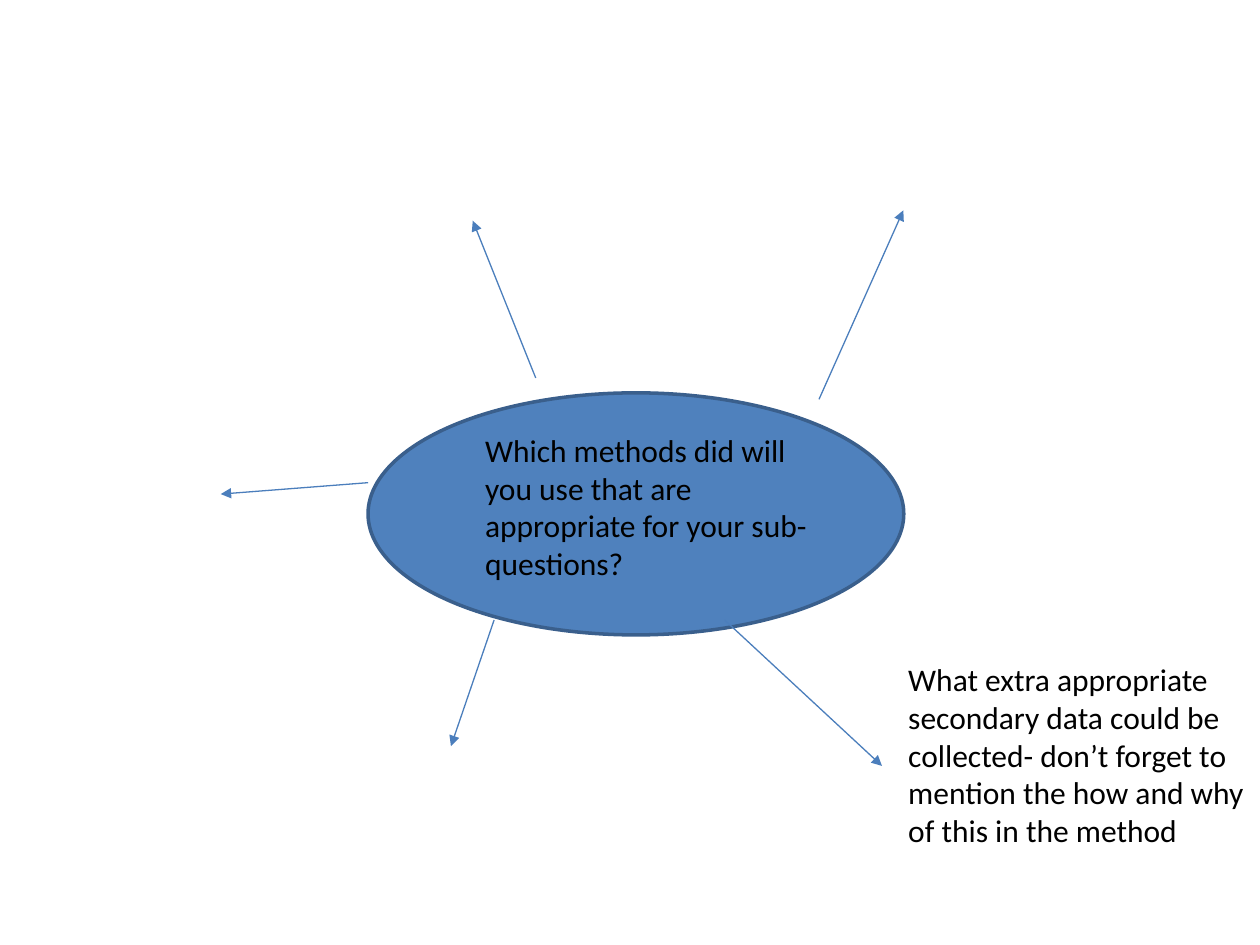
"""Build a mind-map slide about choosing research methods."""
from lxml.etree import SubElement
from pptx import Presentation
from pptx.dml.color import RGBColor
from pptx.enum.shapes import MSO_CONNECTOR, MSO_SHAPE
from pptx.enum.text import MSO_AUTO_SIZE
from pptx.oxml.ns import qn
from pptx.util import Cm, Pt

HUB = (7.42, 7.92, 10.8, 4.88)
NOTES = [
    ("Which methods did will you use that are appropriate for your sub-questions?",
     (9.53, 8.56, 7.42, 3.33)),
    ("What extra appropriate secondary data could be collected- don’t forget to "
     "mention the how and why of this in the method",
     (18.06, 13.18, 7.34, 4.11)),
]
ARROWS = [
    ((16.51, 8.05), (18.21, 4.24)),
    ((10.8, 7.62), (9.53, 4.45)),
    ((7.42, 9.73), (4.45, 9.96)),
    ((9.96, 12.5), (9.09, 15.04)),
    ((14.61, 12.5), (17.78, 15.44)),
]


def paint(color_format, value):
    color_format.rgb = RGBColor.from_string(value)


def add_hub(page):
    hub = page.shapes.add_shape(MSO_SHAPE.OVAL, *map(Cm, HUB))
    hub.shadow.inherit = False
    hub.fill.solid()
    paint(hub.fill.fore_color, "4F81BD")
    paint(hub.line.color, "3A5F8C")
    hub.line.width = Pt(2)


def add_note(page, text, place):
    box = page.shapes.add_textbox(*map(Cm, place))
    box.text_frame.word_wrap = True
    box.text_frame.auto_size = MSO_AUTO_SIZE.SHAPE_TO_FIT_TEXT
    span = box.text_frame.paragraphs[0].add_run()
    span.text = text
    span.font.name = "Calibri"
    span.font.size = Pt(18)
    paint(span.font.color, "000000")


def add_arrow(page, start, end):
    arrow = page.shapes.add_connector(MSO_CONNECTOR.STRAIGHT, *map(Cm, start + end))
    paint(arrow.line.color, "4B7EBC")
    arrow.line.width = Pt(0.75)
    properties = arrow.element.spPr
    SubElement(properties.find(qn("a:ln")), qn("a:tailEnd"), type="triangle")
    SubElement(properties, qn("a:effectLst"))


def main():
    deck = Presentation()
    deck.slide_width, deck.slide_height = Cm(25.4), Cm(19.05)
    page = deck.slides.add_slide(deck.slide_layouts[6])
    add_hub(page)
    for start, end in ARROWS:
        add_arrow(page, start, end)
    for text, place in NOTES:
        add_note(page, text, place)
    deck.save("out.pptx")


if __name__ == "__main__":
    main()
